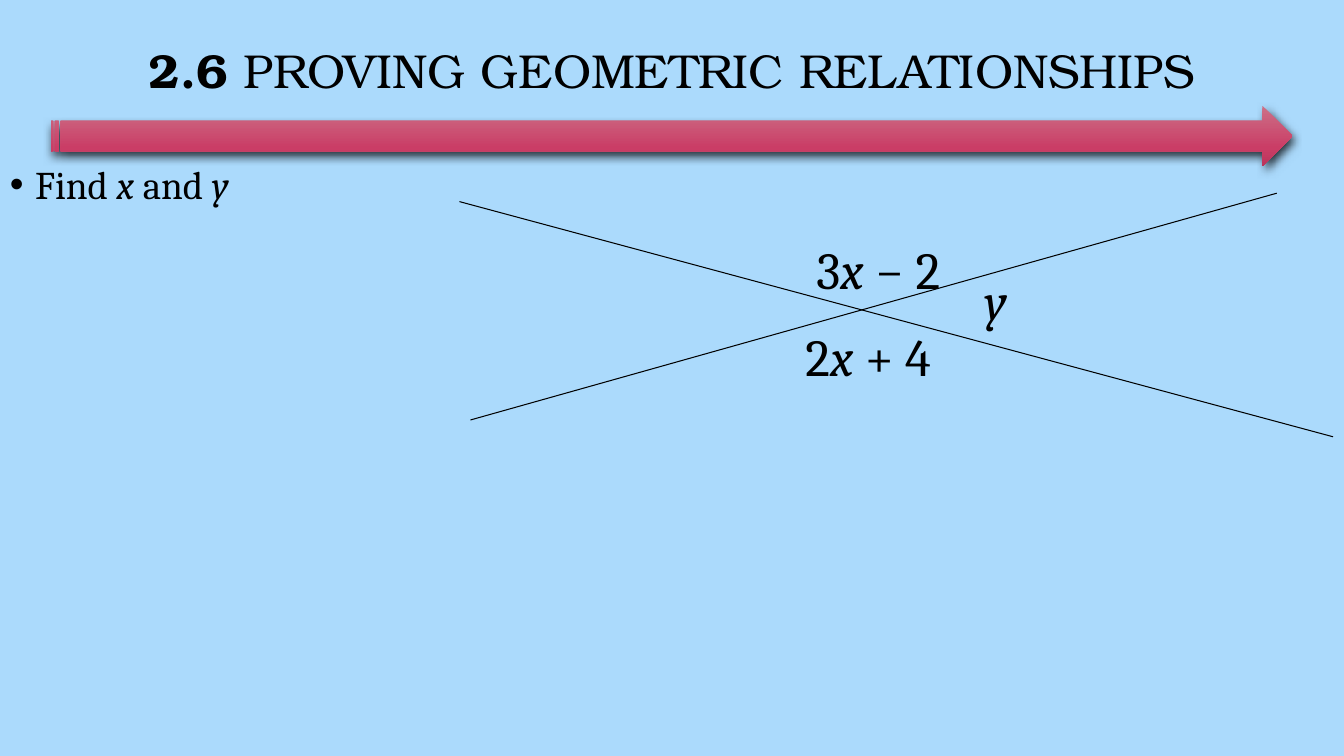
from dataclasses import dataclass

from lxml import etree
from pptx import Presentation
from pptx.dml.color import RGBColor
from pptx.enum.shapes import MSO_CONNECTOR, MSO_SHAPE
from pptx.enum.text import MSO_ANCHOR, MSO_AUTO_SIZE, PP_ALIGN
from pptx.oxml import parse_xml
from pptx.oxml.ns import nsdecls, qn
from pptx.util import Inches, Pt

ARROW = MSO_SHAPE.STRIPED_RIGHT_ARROW
LINE = MSO_CONNECTOR.STRAIGHT
TOP, MIDDLE = MSO_ANCHOR.TOP, MSO_ANCHOR.MIDDLE
FIXED = MSO_AUTO_SIZE.NONE
LEFT, CENTER = PP_ALIGN.LEFT, PP_ALIGN.CENTER
COLS, ROWS = 160, 90
WIDTH, HEIGHT = Inches(13.333), Inches(7.5)


@dataclass(frozen=True)
class Theme:
    back: str = "ABDAFC"
    ink: str = "000000"
    bar: tuple = ((0, "CC7087"), (69, "CA3D66"), (100, "BA355B"))
    head: str = "TeX Gyre Bonum"
    body: str = "Cambria"
    title: float = 34
    text: float = 28
    label: float = 37.3
    line: float = 0.75


THEME = Theme()


def grid(*cells):
    return [int(cell * (HEIGHT / ROWS if i % 2 else WIDTH / COLS))
            for i, cell in enumerate(cells)]


def apply(item, form):
    for name, value in form.items():
        setattr(item, name, value)


def write(frame, runs, face, size, anchor=TOP, **form):
    apply(frame, {"word_wrap": True, "auto_size": FIXED,
                  "vertical_anchor": anchor})
    para = frame.paragraphs[0]
    apply(para, form)
    for text, style in runs:
        run = para.add_run()
        run.text = text
        apply(run.font, {"name": face, "size": Pt(size),
                         "bold": "b" in style, "italic": "i" in style})
        run.font.color.rgb = RGBColor.from_string(THEME.ink)
    return para


def add_title(slide, runs):
    title = slide.shapes.title
    left, top, width, height = grid(0, 0, COLS, 17.4)
    apply(title, {"left": left, "top": top, "width": width, "height": height})
    write(title.text_frame, runs, THEME.head, THEME.title, MIDDLE,
          alignment=CENTER, line_spacing=0.9)


def add_arrow(slide, *cells):
    arrow = slide.shapes.add_shape(ARROW, *grid(*cells))
    arrow.line.fill.background()
    stops = "".join(f'<a:gs pos="{at * 1000}"><a:srgbClr val="{color}"/></a:gs>'
                    for at, color in THEME.bar)
    props = arrow.element.spPr
    props.find(qn("a:prstGeom")).addnext(parse_xml(
        f'<a:gradFill {nsdecls("a")}><a:gsLst>{stops}</a:gsLst>'
        '<a:lin ang="5400000" scaled="0"/></a:gradFill>'))
    props.append(parse_xml(
        f'<a:effectLst {nsdecls("a")}><a:outerShdw blurRad="{Pt(6)}" '
        f'dist="{Pt(3)}" dir="5400000" rotWithShape="0">'
        f'<a:srgbClr val="{THEME.ink}"><a:alpha val="76000"/></a:srgbClr>'
        '</a:outerShdw></a:effectLst>'))
    slide.shapes.title.element.addprevious(arrow.element)


def add_text(slide, cells, runs, size, **form):
    box = slide.shapes.add_textbox(*grid(*cells))
    return write(box.text_frame, runs, THEME.body, size, alignment=LEFT, **form)


def add_task(slide, runs):
    para = add_text(slide, (0, 17.4, COLS, 67.8), runs, THEME.text,
                    line_spacing=1.2, space_before=Pt(10))
    props = para._p.get_or_add_pPr()
    props.set("marL", str(Inches(0.25)))
    props.set("indent", str(Inches(-0.25)))
    etree.SubElement(props, qn("a:buFont")).set("typeface", "Arial")
    etree.SubElement(props, qn("a:buChar")).set("char", "•")


def add_line(slide, *ends):
    line = slide.shapes.add_connector(LINE, *grid(*ends))
    line.line.color.rgb = RGBColor.from_string(THEME.ink)
    line.line.width = Pt(THEME.line)
    etree.SubElement(line.element.spPr, qn("a:effectLst"))


def main():
    deck = Presentation()
    apply(deck, {"slide_width": WIDTH, "slide_height": HEIGHT})
    slide = deck.slides.add_slide(deck.slide_layouts[5])
    fill = slide.background.fill
    fill.solid()
    fill.fore_color.rgb = RGBColor.from_string(THEME.back)

    add_title(slide, [("2.6 ", "b"), ("PROVING GEOMETRIC RELATIONSHIPS", "")])
    add_arrow(slide, 6.1, 12.6, 147.8, 7.2)
    add_task(slide, [("Find ", ""), ("x", "i"), (" and ", ""), ("y", "i")])
    for ends in ((54.7, 24, 158.7, 52), (56, 50, 152, 23)):
        add_line(slide, *ends)
    labels = (
        (96, 27.7, [("3", ""), ("x", "i"), (" − 2", "")]),
        (94.7, 38, [("2", ""), ("x", "i"), (" + 4", "")]),
        (116, 31.4, [("y", "i")]),
    )
    for col, row, runs in labels:
        add_text(slide, (col, row, 32, 8.75), runs, THEME.label)
    deck.save("out.pptx")


if __name__ == "__main__":
    main()
